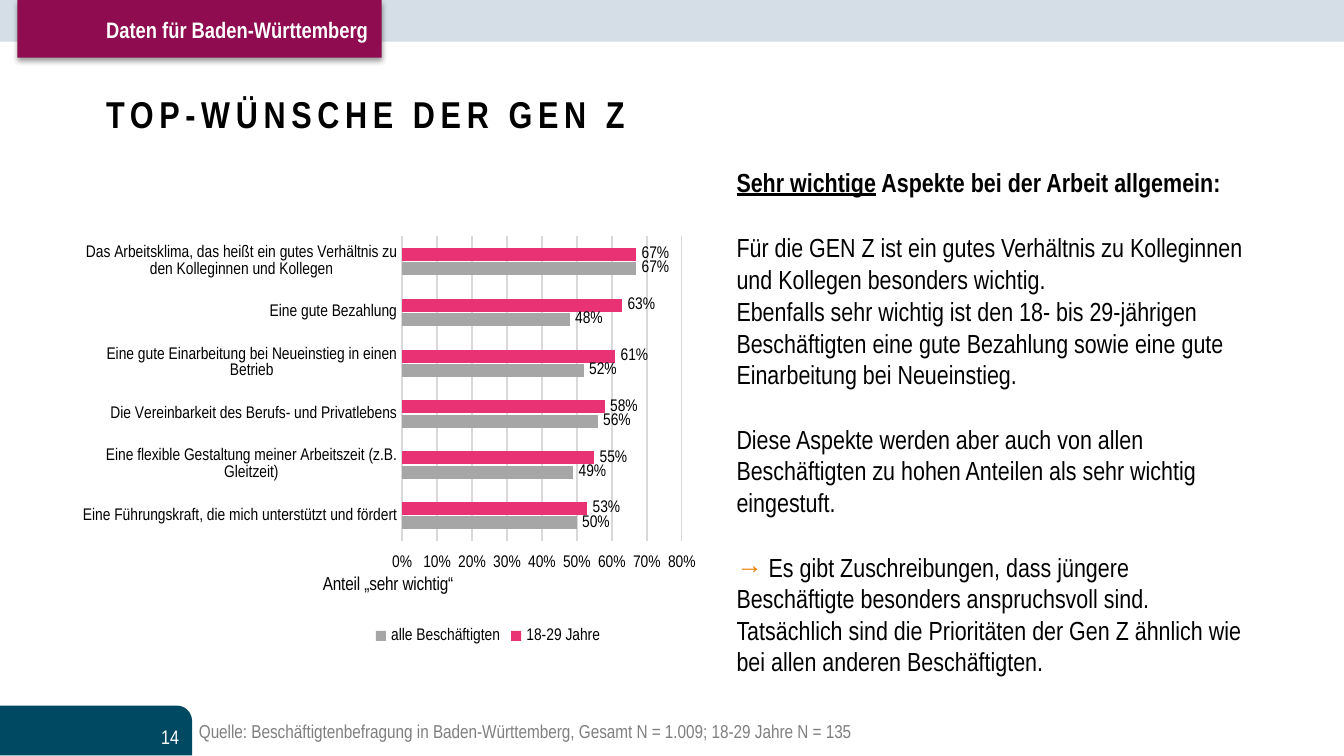
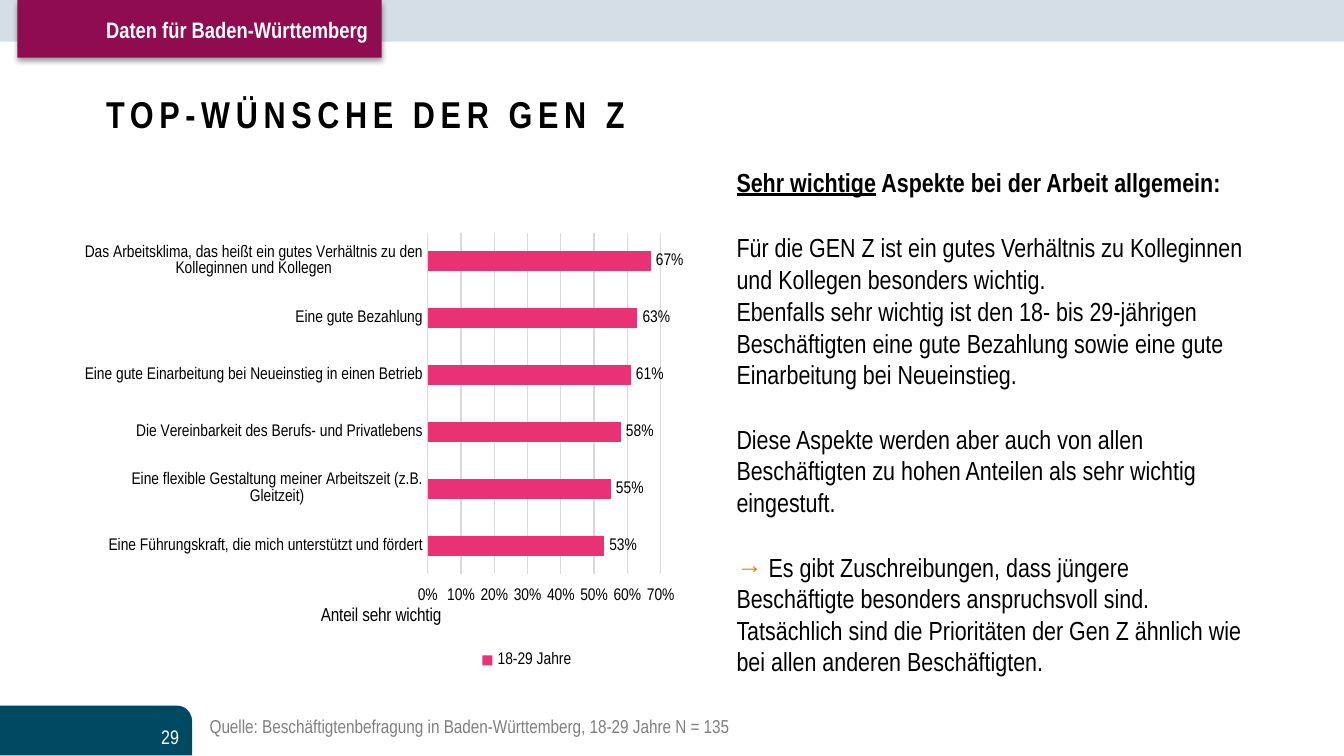
from dataclasses import dataclass

from lxml import etree
from pptx import Presentation
from pptx.chart.data import CategoryChartData
from pptx.dml.color import RGBColor
from pptx.enum.chart import (XL_CHART_TYPE, XL_LABEL_POSITION, XL_LEGEND_POSITION,
                             XL_TICK_LABEL_POSITION, XL_TICK_MARK)
from pptx.enum.shapes import MSO_SHAPE
from pptx.enum.text import MSO_ANCHOR, MSO_AUTO_SIZE, PP_ALIGN
from pptx.oxml.ns import qn
from pptx.util import Inches, Pt

BAR_CLUSTERED = XL_CHART_TYPE.BAR_CLUSTERED
LABELS_AT_END = XL_TICK_LABEL_POSITION.HIGH
NO_TICKS = XL_TICK_MARK.NONE
LABEL_OUTSIDE = XL_LABEL_POSITION.OUTSIDE_END
LEGEND_BOTTOM = XL_LEGEND_POSITION.BOTTOM
RECTANGLE = MSO_SHAPE.RECTANGLE
ONE_ROUND_CORNER = MSO_SHAPE.ROUND_1_RECTANGLE
LEFT, RIGHT = PP_ALIGN.LEFT, PP_ALIGN.RIGHT
TOP, MIDDLE = MSO_ANCHOR.TOP, MSO_ANCHOR.MIDDLE
NO_AUTOFIT, GROW = MSO_AUTO_SIZE.NONE, MSO_AUTO_SIZE.SHAPE_TO_FIT_TEXT


@dataclass(frozen=True)
class Theme:
    font: str = "Arial Narrow"
    text: str = "000000"
    white: str = "FFFFFF"
    band: str = "D5DEE6"
    footer: str = "004963"
    tag: str = "8E0C4F"
    arrow: str = "EF7D00"
    source: str = "7F7F7F"
    grid: str = "D9D9D9"
    young: str = "E83274"
    everyone: str = "A6A6A6"
    title_size: float = 20
    body_size: float = 14
    tag_size: float = 12
    number_size: float = 10.5
    small_size: float = 10
    chart_size: float = 9


THEME = Theme()
SLIDE_WIDTH = 10
SLIDE_HEIGHT = SLIDE_WIDTH * 9 / 16
BLOCK_GAP, LINE_GAP = 18, 0.7

TITLE = "TOP-WÜNSCHE DER GEN Z"
TAG = "Daten für Baden-Württemberg"
# Each paragraph: space before in points, bold, runs as (text, colour, underline)
BODY = [
    (0, True, [("Sehr wichtige", None, True),
               (" Aspekte bei der Arbeit allgemein:", None, False)]),
    (BLOCK_GAP, False, [("Für die GEN Z ist ein gutes Verhältnis zu Kolleginnen und "
                         "Kollegen besonders wichtig.", None, False)]),
    (LINE_GAP, False, [("Ebenfalls sehr wichtig ist den 18- bis 29-jährigen Beschäftigten "
                        "eine gute Bezahlung sowie eine gute Einarbeitung bei "
                        "Neueinstieg.", None, False)]),
    (BLOCK_GAP, False, [("Diese Aspekte werden aber auch von allen Beschäftigten zu hohen "
                         "Anteilen als sehr wichtig eingestuft.", None, False)]),
    (BLOCK_GAP, False, [("→ ", THEME.arrow, False),
                        ("Es gibt Zuschreibungen, dass jüngere Beschäftigte besonders "
                         "anspruchsvoll sind. Tatsächlich sind die Prioritäten der Gen Z "
                         "ähnlich wie bei allen anderen Beschäftigten.", None, False)]),
]
WISHES = [
    "Das Arbeitsklima, das heißt ein gutes Verhältnis zu den Kolleginnen und Kollegen",
    "Eine gute Bezahlung",
    "Eine gute Einarbeitung bei Neueinstieg in einen Betrieb",
    "Die Vereinbarkeit des Berufs- und Privatlebens",
    "Eine flexible Gestaltung meiner Arbeitszeit (z.B. Gleitzeit)",
    "Eine Führungskraft, die mich unterstützt und fördert",
]
YOUNG = ("18-29 Jahre", [0.67, 0.63, 0.61, 0.58, 0.55, 0.53], THEME.young)
EVERYONE = ("alle Beschäftigten", [0.67, 0.48, 0.52, 0.56, 0.49, 0.5], THEME.everyone)

SLIDES = [
    dict(number="14",
         source="Quelle: Beschäftigtenbefragung in Baden-Württemberg, "
                "Gesamt N = 1.009; 18-29 Jahre N = 135",
         source_box=(1.43, 5.31, 7.35, 0.26),
         chart_box=(0.58, 1.59, 4.73, 3.34),
         chart=dict(series=[YOUNG, EVERYONE], axis_title="Anteil „sehr wichtig“",
                    maximum=0.8, plot_at=(0.51, 0.05, 0.44, 0.68),
                    title_at=(0.38, 0.8), legend_at=(0.46, 0.91))),
    dict(number="29",
         source="Quelle: Beschäftigtenbefragung in Baden-Württemberg, "
                "18-29 Jahre N = 135",
         source_box=(1.51, 5.27, 7.35, 0.26),
         chart_box=(0.63, 1.59, 4.56, 3.58),
         chart=dict(series=[YOUNG], axis_title="Anteil sehr wichtig",
                    maximum=0.7, plot_at=(0.56, 0.04, 0.38, 0.71),
                    title_at=(0.38, 0.81), legend_at=(0.64, 0.9))),
]


def color(value):
    return RGBColor.from_string(value)


def inches(box):
    return [Inches(length) for length in box]


def set_font(font, size, text_color=THEME.text, bold=False):
    font.name = THEME.font
    font.size = Pt(size)
    font.bold = bold
    font.color.rgb = color(text_color)


def move(shape, box):
    shape.left, shape.top, shape.width, shape.height = inches(box)


def add_block(slide, kind, box, fill):
    shape = slide.shapes.add_shape(kind, *inches(box))
    shape.shadow.inherit = False
    shape.fill.solid()
    shape.fill.fore_color.rgb = color(fill)
    shape.line.fill.background()
    return shape


def add_label(slide, box, text, size, text_color, bold=False, align=LEFT,
              anchor=TOP, inset=None, auto_size=NO_AUTOFIT):
    frame = slide.shapes.add_textbox(*inches(box)).text_frame
    frame.word_wrap = True
    frame.auto_size = auto_size
    frame.vertical_anchor = anchor
    if inset is not None:
        frame.margin_left = frame.margin_right = Inches(inset)
        frame.margin_top = frame.margin_bottom = Inches(inset)
    paragraph = frame.paragraphs[0]
    paragraph.text = text
    paragraph.alignment = align
    set_font(paragraph.font, size, text_color, bold)


def add_soft_shadow(shape):
    effects = shape._element.spPr.find(qn("a:effectLst"))
    shadow = etree.SubElement(effects, qn("a:outerShdw"), blurRad=str(Pt(3.1)),
                              dist=str(Pt(1.6)), dir="5400000", rotWithShape="0")
    shade = etree.SubElement(shadow, qn("a:srgbClr"), val="000000")
    etree.SubElement(shade, qn("a:alpha"), val="38000")


def add_header(slide, box):
    """Band across the slide with the raised tag on its left."""
    left, top, width, height = box
    add_block(slide, RECTANGLE, box, THEME.band)
    tag = add_block(slide, RECTANGLE, (left + 0.13, top, 2.71, 0.43), THEME.tag)
    add_soft_shadow(tag)
    add_label(slide, (left + 0.58, top + 0.07, 2.26, 0.3), TAG, THEME.tag_size,
              THEME.white, bold=True, align=RIGHT, auto_size=GROW)


def add_footer(slide, box, number, source, source_box):
    """Corner block with the page number, and the source line."""
    left, top, width, height = box
    corner = add_block(slide, ONE_ROUND_CORNER, box, THEME.footer)
    corner.adjustments[0] = 0.31
    add_label(slide, (left + 0.34, top + 0.08, width - 0.34, 0.3), number,
              THEME.number_size, THEME.white, align=RIGHT, anchor=MIDDLE)
    add_label(slide, source_box, source, THEME.small_size, THEME.source, inset=0.05)


def fill_title(slide, box):
    title = slide.shapes.title
    move(title, box)
    frame = title.text_frame
    frame.auto_size = NO_AUTOFIT
    frame.vertical_anchor = MIDDLE
    paragraph = frame.paragraphs[0]
    paragraph.alignment = LEFT
    run = paragraph.add_run()
    run.text = TITLE
    run._r.get_or_add_rPr().set("spc", "300")
    set_font(paragraph.font, THEME.title_size, bold=True)


def fill_body(slide, box):
    body = slide.placeholders[1]
    move(body, box)
    frame = body.text_frame
    frame.auto_size = NO_AUTOFIT
    for index, (space_before, bold, runs) in enumerate(BODY):
        paragraph = frame.add_paragraph() if index else frame.paragraphs[0]
        paragraph.space_before = Pt(space_before)
        properties = paragraph._p.get_or_add_pPr()
        properties.set("marL", "0")
        properties.set("indent", "0")
        etree.SubElement(properties, qn("a:buNone"))
        set_font(paragraph.font, THEME.body_size, bold=bold)
        for text, text_color, underline in runs:
            run = paragraph.add_run()
            run.text = text
            if text_color:
                run.font.color.rgb = color(text_color)
            if underline:
                run.font.underline = True


def set_layout(element, position, fractions, inner=False):
    """Fix a chart part at fractions (x, y[, width, height]) of the chart."""
    for old in element.findall(qn("c:layout")):
        element.remove(old)
    layout = etree.Element(qn("c:layout"))
    element.insert(position, layout)
    manual = etree.SubElement(layout, qn("c:manualLayout"))
    if inner:
        etree.SubElement(manual, qn("c:layoutTarget"), val="inner")
    for name in ("xMode", "yMode"):
        etree.SubElement(manual, qn(f"c:{name}"), val="edge")
    for name, fraction in zip("xywh", fractions):
        etree.SubElement(manual, qn(f"c:{name}"), val=str(fraction))


def add_wish_chart(slide, box, series, axis_title, maximum, plot_at, title_at, legend_at):
    data = CategoryChartData(number_format="0%")
    data.categories = WISHES
    for name, values, _ in series:
        data.add_series(name, values)
    chart = slide.shapes.add_chart(BAR_CLUSTERED, *inches(box), data).chart
    chart.has_title = False
    set_font(chart.font, THEME.small_size)

    # Bars and their labels
    plot = chart.plots[0]
    plot.gap_width, plot.overlap = 182, -10
    plot.vary_by_categories = False
    for bars, (_, _, fill) in zip(plot.series, series):
        bars.format.fill.solid()
        bars.format.fill.fore_color.rgb = color(fill)
        labels = bars.data_labels
        labels.show_value = True
        labels.position = LABEL_OUTSIDE
        labels.number_format, labels.number_format_is_linked = "0%", False
        set_font(labels.font, THEME.chart_size)
    set_layout(plot._element.getparent(), 0, plot_at, inner=True)

    # Axes: the first wish on top, the shares below the last one
    wishes, shares = chart.category_axis, chart.value_axis
    for axis in (wishes, shares):
        axis.major_tick_mark = axis.minor_tick_mark = NO_TICKS
        set_font(axis.tick_labels.font, THEME.chart_size)
    wishes.reverse_order = True
    shares.tick_label_position = LABELS_AT_END
    shares.minimum_scale, shares.maximum_scale, shares.major_unit = 0, maximum, 0.1
    shares.tick_labels.number_format = "0%"
    shares.tick_labels.number_format_is_linked = False
    shares.format.line.fill.background()
    for line in (wishes.format.line, shares.major_gridlines.format.line):
        line.color.rgb = color(THEME.grid)
        line.width = Pt(0.75)
    title = shares.axis_title
    title.text_frame.text = axis_title
    set_font(title.text_frame.paragraphs[0].font, THEME.small_size)
    set_layout(title._element, 1, title_at)

    # Legend
    chart.has_legend = True
    legend = chart.legend
    legend.position = LEGEND_BOTTOM
    legend.include_in_layout = False
    set_font(legend.font, THEME.chart_size)
    set_layout(legend._element, 1, legend_at)


def add_wishes_slide(presentation, number, source, source_box, chart_box, chart):
    slide = presentation.slides.add_slide(presentation.slide_layouts[1])
    add_header(slide, (0, 0, SLIDE_WIDTH, 0.31))
    add_footer(slide, (0, 5.25, 1.43, 0.37), number, source, source_box)
    fill_title(slide, (0.69, 0.3, 8.62, 1.09))
    fill_body(slide, (5.38, 1.19, 3.99, 4))
    add_wish_chart(slide, chart_box, **chart)


def main():
    presentation = Presentation()
    presentation.slide_width = Inches(SLIDE_WIDTH)
    presentation.slide_height = Inches(SLIDE_HEIGHT)
    for content in SLIDES:
        add_wishes_slide(presentation, **content)
    presentation.save("out.pptx")


if __name__ == "__main__":
    main()
